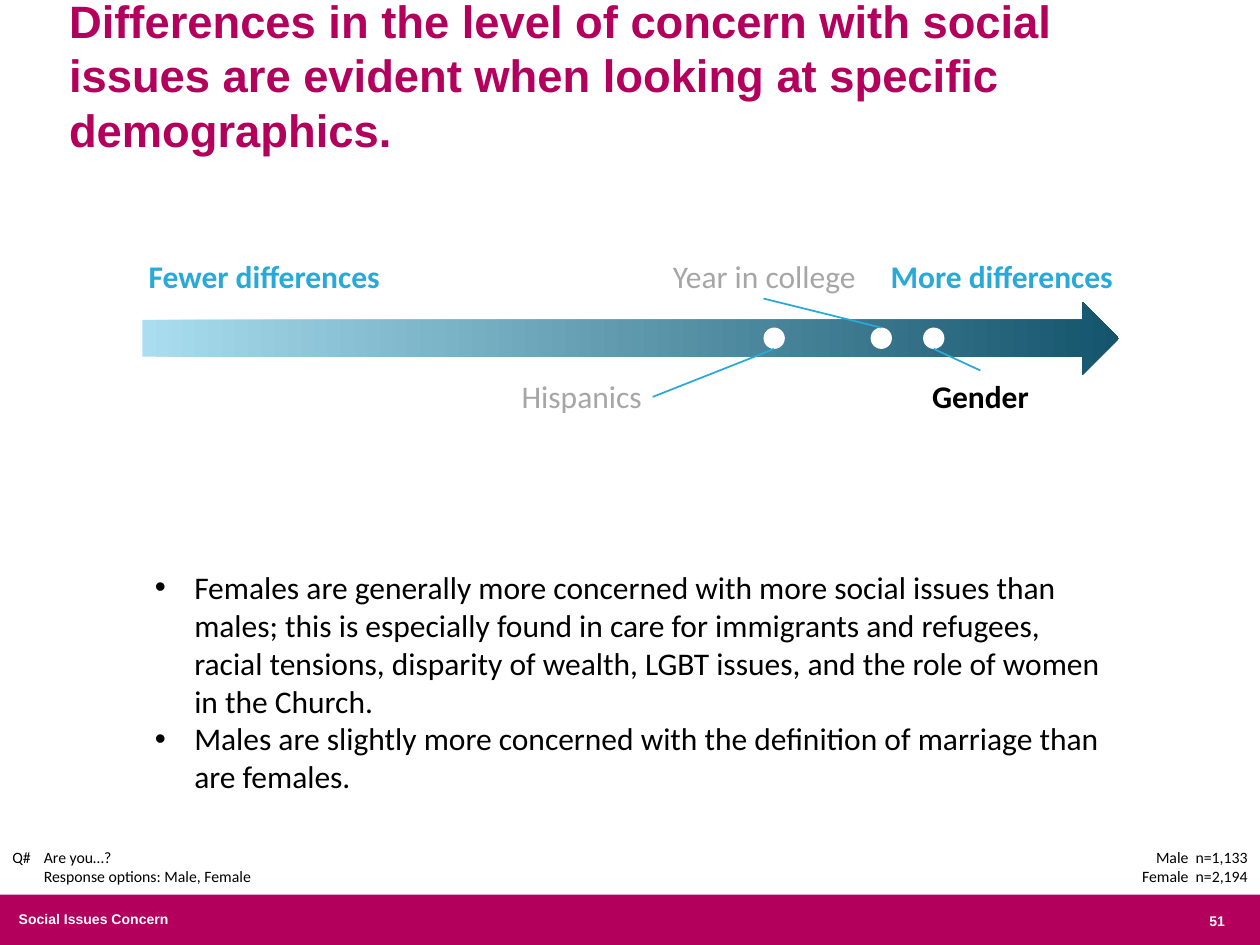
from lxml.etree import SubElement
from pptx import Presentation
from pptx.dml.color import RGBColor
from pptx.enum.shapes import MSO_CONNECTOR as Connector, MSO_SHAPE as Shape
from pptx.enum.text import MSO_ANCHOR as Anchor, PP_ALIGN as Align
from pptx.oxml.ns import qn
from pptx.util import Pt

MAGENTA, BLUE, GREY = "B2005C", "28A9D7", "A5A6A5"
BLACK, WHITE = "000000", "FFFFFF"
SCALE_LEFT, SCALE_WIDTH = 81.4, 558
DOT_SIZE, DOT_MIDDLE = 12.2, 193.3
UPPER_LABELS, LOWER_LABELS = 143.3, 211.7


def color(hex_string):
    return RGBColor.from_string(hex_string)


def add_solid(slide, kind, left, top, width, height, fill):
    shape = slide.shapes.add_shape(kind, Pt(left), Pt(top), Pt(width), Pt(height))
    shape.shadow.inherit = False
    shape.line.fill.background()
    shape.fill.solid()
    shape.fill.fore_color.rgb = color(fill)
    return shape


def add_text(slide, left, top, width, height, paragraphs, size, hex_color,
             font="Calibri", bold=False, align=Align.LEFT, hanging=0,
             bullet=None, inset=None, wrap=True, anchor=Anchor.TOP):
    """Each paragraph is a list of lines, joined by line breaks."""
    box = slide.shapes.add_textbox(Pt(left), Pt(top), Pt(width), Pt(height))
    frame = box.text_frame
    frame.word_wrap = wrap
    frame.vertical_anchor = anchor
    if inset is not None:
        frame.margin_left = frame.margin_right = Pt(inset)
        frame.margin_top = frame.margin_bottom = Pt(inset)
    for index, lines in enumerate(paragraphs):
        paragraph = frame.add_paragraph() if index else frame.paragraphs[0]
        paragraph.alignment = align
        properties = paragraph._p.get_or_add_pPr()
        if hanging:
            properties.set("marL", str(Pt(hanging)))
            properties.set("indent", str(Pt(-hanging)))
        if bullet:
            SubElement(properties, qn("a:buFont"), typeface="Arial")
            SubElement(properties, qn("a:buChar"), char=bullet)
        for number, line in enumerate(lines):
            if number:
                paragraph.add_line_break()
            run = paragraph.add_run()
            run.text = line
            run.font.name, run.font.size, run.font.bold = font, Pt(size), bold
            run.font.color.rgb = color(hex_color)


def add_label(slide, left, top, width, text, hex_color, bold=False, align=Align.LEFT):
    add_text(slide, left, top, width, 28.8, [[text]], 18, hex_color,
             bold=bold, align=align, inset=3.6, wrap=False)


def add_gradient_arrow(slide):
    arrow = add_solid(slide, Shape.RIGHT_ARROW, SCALE_LEFT, 172.4, SCALE_WIDTH, 41.8, BLUE)
    arrow.fill.gradient()
    arrow.fill.gradient_angle = 0
    for stop, hex_color in zip(arrow.fill.gradient_stops, ("A9DDEF", "14546C")):
        stop.color.rgb = color(hex_color)


def add_marker(slide, center, side, label_x, label_y):
    """Dot on the scale with a leader from its top (-1) or bottom (1)."""
    radius = DOT_SIZE / 2
    add_solid(slide, Shape.OVAL, center - radius, DOT_MIDDLE - radius,
              DOT_SIZE, DOT_SIZE, WHITE)
    leader = slide.shapes.add_connector(
        Connector.STRAIGHT, Pt(center), Pt(DOT_MIDDLE + side * radius),
        Pt(label_x), Pt(label_y))
    leader.line.color.rgb = color(BLUE)
    leader.line.width = Pt(1)
    SubElement(leader._element.spPr, qn("a:effectLst"))


def main():
    presentation = Presentation()
    presentation.slide_width, presentation.slide_height = Pt(720), Pt(540)
    slide = presentation.slides.add_slide(presentation.slide_layouts[6])

    # Footer band
    add_solid(slide, Shape.RECTANGLE, 0, 511.2, 720, 28.8, MAGENTA)
    add_text(slide, 3.6, 517, 283.7, 17.3, [["Social Issues Concern"]], 8, WHITE,
             font="Arial", bold=True)
    add_text(slide, 423.4, 517.7, 283.7, 17.3, [["51"]], 8, WHITE,
             font="Arial", bold=True, align=Align.RIGHT)

    # Title
    add_text(slide, 32.4, 7.9, 633.6, 85,
             [["Differences in the level of concern with social issues are "
               "evident when looking at specific demographics."]],
             25.9, MAGENTA, font="Arial", bold=True, anchor=Anchor.BOTTOM)

    # Scale of differences
    add_gradient_arrow(slide)
    add_label(slide, SCALE_LEFT, UPPER_LABELS, 141.1, "Fewer differences", BLUE, True)
    add_label(slide, 503.5, UPPER_LABELS, 136.1, "More differences", BLUE, True, Align.RIGHT)
    add_label(slide, 294.5, LOWER_LABELS, 80, "Hispanics", GREY)
    add_label(slide, 380.9, UPPER_LABELS, 116, "Year in college", GREY)
    add_label(slide, 526.8, LOWER_LABELS, 67, "Gender", BLACK, True, Align.CENTER)
    add_marker(slide, 442.4, 1, 373, 226.8)
    add_marker(slide, 503.6, -1, 436.3, 170.6)
    add_marker(slide, 533.6, 1, 560.2, LOWER_LABELS)

    # Findings
    add_text(slide, SCALE_LEFT, 321.1, SCALE_WIDTH, 138.2,
             [["Females are generally more concerned with more social issues than "
               "males; this is especially found in care for immigrants and refugees, "
               "racial tensions, disparity of wealth, LGBT issues, and the role of "
               "women in the Church."],
              ["Males are slightly more concerned with the definition of marriage "
               "than are females."]],
             18, BLACK, hanging=22.5, bullet="•")

    # Question and sample sizes
    add_text(slide, 0, 481, 720, 28.8,
             [["Q#\tAre you…?", "Response options: Male, Female"]],
             9, BLACK, hanging=18)
    add_text(slide, 442.1, 481, 277.9, 28.8,
             [["Male  n=1,133"], ["Female  n=2,194"]],
             9, BLACK, align=Align.RIGHT, hanging=32.4)

    presentation.save("out.pptx")


if __name__ == "__main__":
    main()
